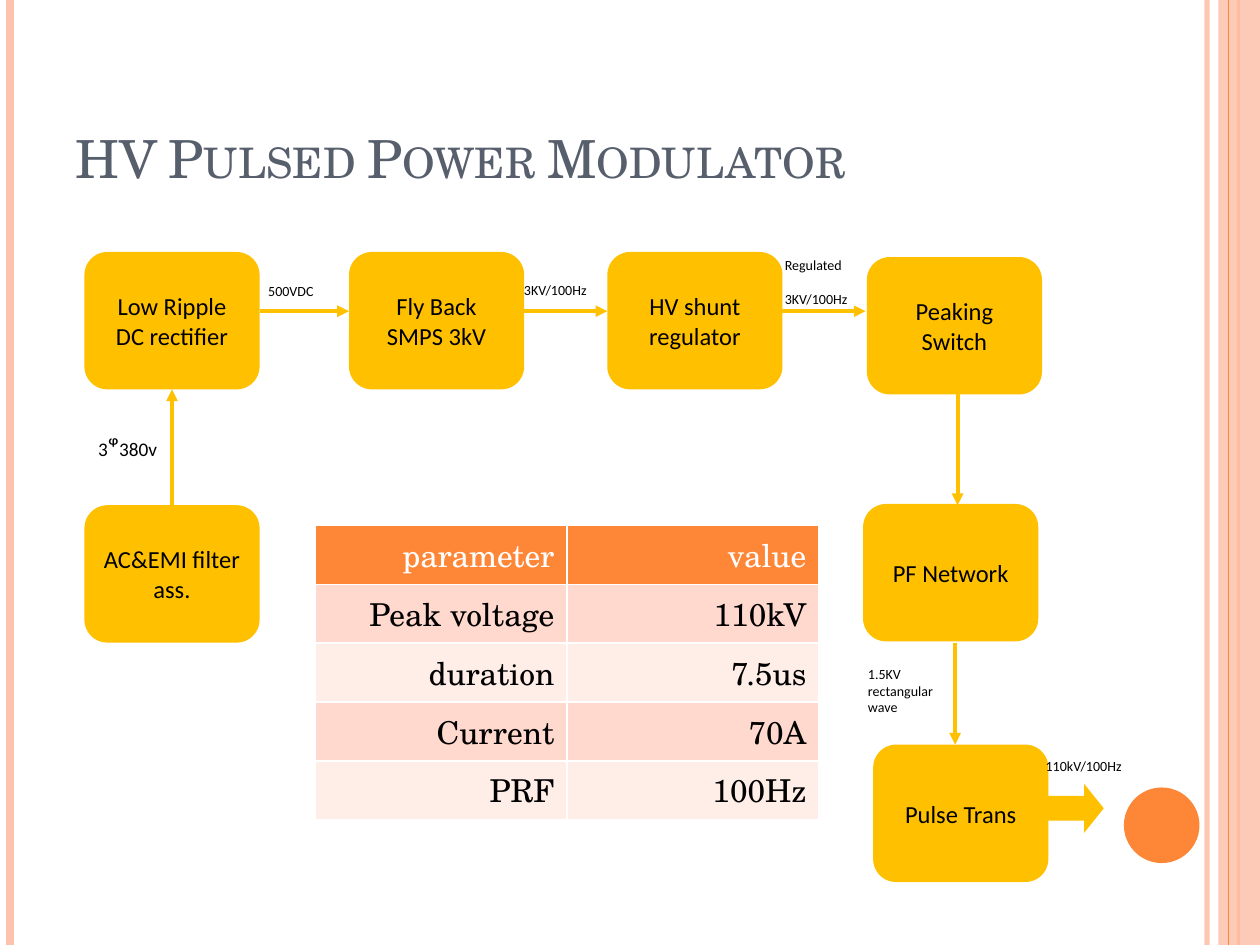
from lxml import etree
from pptx import Presentation
from pptx.dml.color import RGBColor
from pptx.enum import shapes, text
from pptx.oxml import ns
from pptx.util import Inches, Pt

AMBER, ORANGE, PEACH = "FFC000", "FE8637", "FEC3AE"
SERIF, SANS = "TeX Gyre Schola", "Calibri"
BOX_W, BOX_H = 1.39, 1.09


def color(value):
    return RGBColor.from_string(value)


def add_xml(parent, tag, **attributes):
    return etree.SubElement(parent, ns.qn(tag), attributes)


def set_alpha(owner, percent):
    """Make the solid colour found inside owner partly transparent."""
    tint = next(owner.iter(ns.qn("a:srgbClr")))
    add_xml(tint, "a:alpha", val=str(percent * 1000))


def write(frame, paragraphs, size=14, font=SANS, ink="000000", after=10,
          align=text.PP_ALIGN.LEFT, anchor=text.MSO_ANCHOR.MIDDLE, small_caps=False):
    """Fill a frame; each paragraph is a string or a list of (text, size) runs."""
    frame.word_wrap = True
    frame.vertical_anchor = anchor
    for i, content in enumerate(paragraphs):
        paragraph = frame.paragraphs[0] if i == 0 else frame.add_paragraph()
        paragraph.alignment = align
        paragraph.space_after = Pt(after)
        runs = [(content, size)] if isinstance(content, str) else content
        for words, run_size in runs:
            run = paragraph.add_run()
            run.text = words
            run.font.size = Pt(run_size)
            run.font.name = font
            run.font.color.rgb = color(ink)
            if small_caps:
                run._r.get_or_add_rPr().set("cap", "small")


def add_filled(slide, kind, box, fill):
    shape = slide.shapes.add_shape(kind, *map(Inches, box))
    shape.shadow.inherit = False
    shape.fill.solid()
    shape.fill.fore_color.rgb = color(fill)
    shape.line.fill.background()
    return shape


def add_line(slide, start, end, stroke, width, arrow=False):
    line = slide.shapes.add_connector(
        shapes.MSO_CONNECTOR.STRAIGHT, *map(Inches, (*start, *end)))
    line.line.color.rgb = color(stroke)
    line.line.width = Pt(width)
    if arrow:
        add_xml(line.line._get_or_add_ln(), "a:tailEnd", type="triangle")
    add_xml(line._element.spPr, "a:effectLst")
    return line


def add_side_bands(slide, width, height):
    def rule(x, stroke, weight):
        return add_line(slide, (x, 0), (x, height), stroke, weight)

    set_alpha(rule(width - 0.42, PEACH, 3)._element.spPr, 93)
    rule(0.08, PEACH, 4.5)
    rule(width - 0.17, ORANGE, 1.5)
    band = add_filled(slide, shapes.MSO_SHAPE.RECTANGLE,
                      (width - 0.33, 0, 0.33, height), PEACH)
    set_alpha(band._element.spPr, 87)
    rule(width - 0.25, ORANGE, 0.75)
    add_filled(slide, shapes.MSO_SHAPE.OVAL, (width - 1.08, height - 1.25, 0.6, 0.6), ORANGE)


def add_title(slide, box, words):
    title = slide.shapes.title
    title.left, title.top, title.width, title.height = map(Inches, box)
    write(title.text_frame, [words], size=30, font=SERIF, ink="575F6D", after=0,
          anchor=text.MSO_ANCHOR.BOTTOM, small_caps=True)


def add_parameters(slide, box, rows):
    table = slide.shapes.add_table(len(rows), len(rows[0]), *map(Inches, box)).table
    for r, row in enumerate(rows):
        fill = ORANGE if r == 0 else ("FFD9CE" if r % 2 else "FFEDE8")
        for c, words in enumerate(row):
            cell = table.cell(r, c)
            write(cell.text_frame, [words], size=18, font=SERIF, after=0,
                  ink="FFFFFF" if r == 0 else "000000",
                  align=text.PP_ALIGN.RIGHT, anchor=text.MSO_ANCHOR.TOP)
            properties = cell._tc.get_or_add_tcPr()
            for side in ("L", "R", "T", "B"):
                edge = add_xml(properties, f"a:ln{side}", w=str(Pt(1)))
                add_xml(add_xml(edge, "a:solidFill"), "a:srgbClr", val="FFFFFF")
            cell.fill.solid()
            cell.fill.fore_color.rgb = color(fill)


def add_stage(slide, x, y, words):
    stage = add_filled(slide, shapes.MSO_SHAPE.ROUNDED_RECTANGLE, (x, y, BOX_W, BOX_H), AMBER)
    write(stage.text_frame, [words], align=text.PP_ALIGN.CENTER)
    return stage


def add_label(slide, box, paragraphs, size=8):
    write(slide.shapes.add_textbox(*map(Inches, box)).text_frame, paragraphs, size=size)


def add_modulator(slide, left, top):
    """Draw the chain of stages from the AC filter to the pulse transformer."""
    def at(x, y, *size):
        return (left + x, top + y, *size)

    rectifier = add_stage(slide, *at(0, 0), "Low Ripple DC rectifier")
    add_stage(slide, *at(2.1, 0), "Fly Back SMPS 3kV")
    add_stage(slide, *at(4.15, 0), "HV shunt regulator")
    add_stage(slide, *at(6.18, 2), "PF Network")
    ac_filter = add_stage(slide, *at(0, 2.01), "AC&EMI filter ass.")
    add_stage(slide, *at(6.26, 3.91), "Pulse Trans")
    add_stage(slide, *at(6.21, 0.04), "Peaking Switch")

    supply = add_line(slide, at(0.7, 2.01), at(0.7, BOX_H), AMBER, 2.25, arrow=True)
    supply.begin_connect(ac_filter, 0)
    supply.end_connect(rectifier, 2)
    flow_y = 0.47
    for x1, y1, x2, y2 in (
        (BOX_W, flow_y, 2.1, flow_y),
        (2.1 + BOX_W, flow_y, 4.15, flow_y),
        (4.15 + BOX_W, flow_y, 6.2, flow_y),
        (6.93, BOX_H, 6.93, 2.01),
        (6.91, 3.1, 6.91, 3.91),
    ):
        add_line(slide, at(x1, y1), at(x2, y2), AMBER, 2.25, arrow=True)
    output = add_filled(slide, shapes.MSO_SHAPE.RIGHT_ARROW, at(7.64, 4.22, 0.45, 0.39), AMBER)
    output.adjustments[1] = 0.4

    add_label(slide, at(0.01, 1.28, 0.69, 0.52), [[("3", 11), ("ᵠ", 15), ("380v", 11)]])
    for box, paragraphs in (
        ((1.36, -0.03, 0.88, 0.68), ["500VDC"]),
        ((3.39, -0.04, 0.88, 0.68), ["3KV/100Hz"]),
        ((5.46, -0.1, 0.88, 0.68), ["Regulated", "3KV/100Hz"]),
        ((6.12, 3.1, 0.88, 0.76), ["1.5KV rectangular wave"]),
        ((7.53, 3.77, 0.99, 0.61), ["110kV/100Hz"]),
    ):
        add_label(slide, at(*box), paragraphs)


def main():
    width, height = 10, 7.5
    deck = Presentation()
    deck.slide_width, deck.slide_height = Inches(width), Inches(height)
    slide = deck.slides.add_slide(deck.slide_layouts[5])
    add_side_bands(slide, width, height)
    add_title(slide, (0.5, 0.3, 8.17, 1.25), "HV Pulsed Power Modulator")
    add_parameters(slide, (2.5, 4.17, 4, 2.03), [
        ("parameter", "value"),
        ("Peak voltage", "110kV"),
        ("duration", "7.5us"),
        ("Current", "70A"),
        ("PRF", "100Hz"),
    ])
    add_modulator(slide, 0.67, 2)
    deck.save("out.pptx")


if __name__ == "__main__":
    main()
